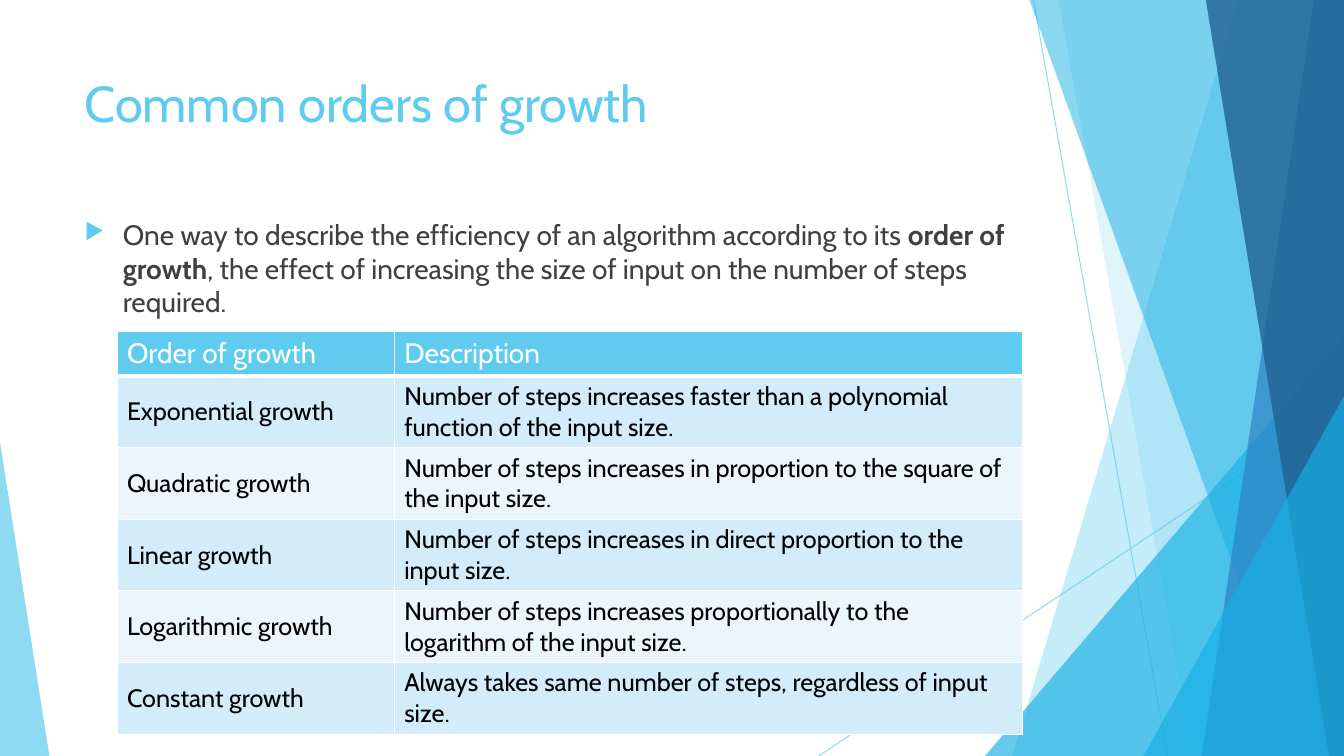
from pptx import Presentation
from pptx.dml.color import RGBColor
from pptx.enum.shapes import MSO_CONNECTOR, MSO_SHAPE
from pptx.enum.text import MSO_ANCHOR, MSO_AUTO_SIZE, PP_ALIGN
from pptx.oxml import parse_xml
from pptx.oxml.ns import nsdecls
from pptx.util import Pt
from lxml.etree import SubElement

PX = 9144  # EMU per px, 100 px to the inch
WIDE, HIGH = 1333, 750

THEME = {
    "font": "Cabin",
    "sky": "5FCBEF", "cyan": "17B0E4", "blue": "2E83C3", "navy": "226292",
    "white": "FFFFFF", "black": "000000", "grey": "404040",
    "bands": ("EAF6FC", "D2ECF9"),
    "title": 36, "body": 20, "cell": 18,
}


def write(para, text, size, color, bold=False):
    run = para.add_run()
    run.text = text
    look = {"name": THEME["font"], "size": Pt(THEME[size]), "bold": bold}
    for key, value in look.items():
        setattr(run.font, key, value)
    run.font.color.rgb = RGBColor.from_string(THEME[color])


def tint(fill, color, alpha):
    fill.solid()
    fill.fore_color.rgb = RGBColor.from_string(THEME[color])
    node = fill._xPr.find(".//{*}srgbClr")
    SubElement(node, node.tag.replace("srgbClr", "alpha"), val=str(alpha * 1000))


deck = Presentation()
deck.slide_width, deck.slide_height = WIDE * PX, HIGH * PX
slide = deck.slides.add_slide(deck.slide_layouts[5])
shapes = slide.shapes

# Thin lines behind the facets
for ends in ((1025, 0, 1158, 750), (1333, 403, 812, 750)):
    line = shapes.add_connector(MSO_CONNECTOR.STRAIGHT, *(n * PX for n in ends))
    line.line.width = Pt(0.75)
    tint(line.line.fill, "sky", 70)
    line._element.spPr.append(parse_xml(f"<a:effectLst {nsdecls('a')}/>"))

# Facets: a band runs from its top x and bottom x to the right edge,
# a wedge has a left, top, width, height and the place of its tip
facets = (
    ((1228, 1004), "sky", 36),
    ((1050, 1183), "sky", 20),
    ((977, 333, 356, 417, 1), "cyan", 66),
    ((1021, 1291), "cyan", 50),
    ((1303, 1192), "blue", 70),
    ((1196, 1318), "navy", 80),
    ((1134, 393, 199, 357, 1), "cyan", 66),
    ((0, 439, 49, 311, 0), "sky", 70),
)
for form, color, alpha in facets:
    if len(form) == 2:
        top, base = form
        pen = shapes.build_freeform(top, 0, scale=PX)
        pen.add_line_segments([(WIDE, 0), (WIDE, HIGH), (base, HIGH)], close=True)
        facet = pen.convert_to_shape()
    else:
        *box, tip = form
        facet = shapes.add_shape(MSO_SHAPE.ISOSCELES_TRIANGLE, *(n * PX for n in box))
        facet.adjustments[0] = tip
    tint(facet.fill, color, alpha)
    facet.line.fill.background()
    facet.shadow.inherit = False

# Title and body text
title = shapes.title
spot = {"left": 74, "top": 67, "width": 940, "height": 144}
for key, value in spot.items():
    setattr(title, key, value * PX)
body = shapes.add_textbox(*(n * PX for n in (74, 211, 940, 118)))
frame = {"word_wrap": True, "auto_size": MSO_AUTO_SIZE.NONE,
         "vertical_anchor": MSO_ANCHOR.TOP}
for shape in (title, body):
    for key, value in frame.items():
        setattr(shape.text_frame, key, value)
    shape.text_frame.paragraphs[0].alignment = PP_ALIGN.LEFT
write(title.text_frame.paragraphs[0], "Common orders of growth", "title", "sky")

para = body.text_frame.paragraphs[0]
props = para._p.get_or_add_pPr()
props.set("marL", str(38 * PX))
props.set("indent", str(-38 * PX))
for mark in (
    f'<a:buClr {nsdecls("a")}><a:srgbClr val="{THEME["sky"]}"/></a:buClr>',
    f'<a:buSzPct {nsdecls("a")} val="80000"/>',
    f'<a:buChar {nsdecls("a")} char="▶"/>',
):
    props.append(parse_xml(mark))
for text, bold in (
    ("One way to describe the efficiency of an algorithm according to its ", False),
    ("order of growth", True),
    (", the effect of increasing the size of input on the number of steps required.", False),
):
    write(para, text, "body", "grey", bold)

# Table of growth orders
rows = (
    ("Order of growth", "Description"),
    ("Exponential growth",
     "Number of steps increases faster than a polynomial function of the input size."),
    ("Quadratic growth",
     "Number of steps increases in proportion to the square of the input size."),
    ("Linear growth",
     "Number of steps increases in direct proportion to the input size."),
    ("Logarithmic growth",
     "Number of steps increases proportionally to the logarithm of the input size."),
    ("Constant growth",
     "Always takes same number of steps, regardless of input size."),
)
grid = shapes.add_table(len(rows), 2, *(n * PX for n in (116, 329, 898, 394))).table
for col, width in zip(grid.columns, (275, 623)):
    col.width = width * PX
for r, texts in enumerate(rows):
    head = r == 0
    grid.rows[r].height = (44 if head else 70) * PX
    for c, text in enumerate(texts):
        cell = grid.cell(r, c)
        cell.vertical_anchor = MSO_ANCHOR.MIDDLE
        for side in "LRTB":
            thick = (r, side) in ((0, "B"), (1, "T"))
            cell._tc.get_or_add_tcPr().append(parse_xml(
                f'<a:ln{side} {nsdecls("a")} w="{Pt(3 if thick else 1)}"><a:solidFill>'
                f'<a:srgbClr val="{THEME["white"]}"/></a:solidFill></a:ln{side}>'))
        cell.fill.solid()
        cell.fill.fore_color.rgb = RGBColor.from_string(
            THEME["sky"] if head else THEME["bands"][r % 2])
        write(cell.text_frame.paragraphs[0], text,
              "body" if head else "cell", "white" if head else "black")

deck.save("out.pptx")
